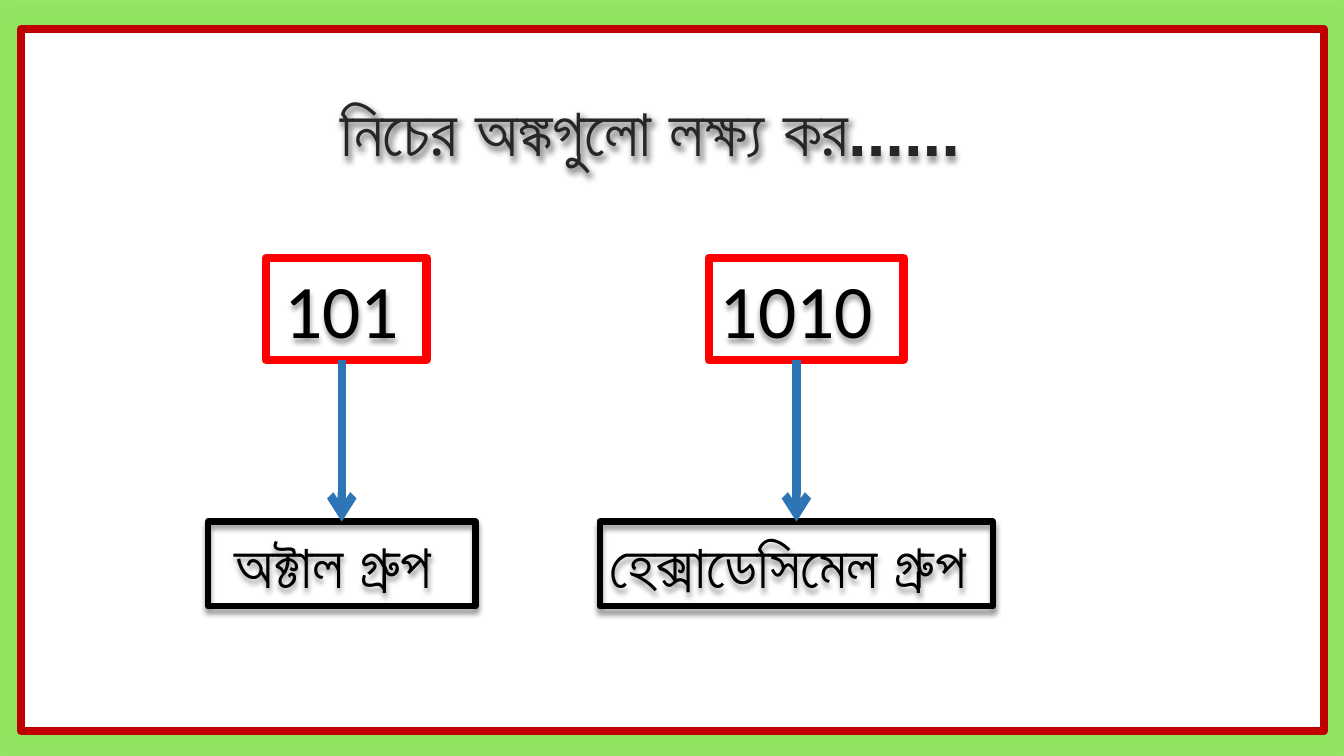
from lxml import etree
from pptx import Presentation
from pptx.dml.color import RGBColor
from pptx.enum.shapes import MSO_CONNECTOR, MSO_SHAPE
from pptx.enum.text import MSO_ANCHOR, PP_ALIGN
from pptx.oxml import parse_xml
from pptx.oxml.ns import qn
from pptx.util import Inches, Pt

RECTANGLE = MSO_SHAPE.RECTANGLE
STRAIGHT = MSO_CONNECTOR.STRAIGHT
CENTER = PP_ALIGN.CENTER
TOP = MSO_ANCHOR.TOP
NAMESPACE = "http://schemas.openxmlformats.org/drawingml/2006/main"
COLORS = {
    "white": "FFFFFF", "frame": "C00000", "glow": "8FE35C", "title": "262626",
    "black": "000000", "red": "FF0000", "arrow": "2E75B6",
}
GLOW = (f'<a:glow rad="{Inches(0.42)}"><a:srgbClr val="{COLORS["glow"]}">'
        '<a:alpha val="90000"/></a:srgbClr></a:glow>')
SHADOW = (f'<a:outerShdw blurRad="{Pt(4)}" dist="{Pt(3)}" dir="5400000" algn="ctr" '
          f'rotWithShape="0"><a:srgbClr val="{COLORS["black"]}">'
          '<a:alpha val="40000"/></a:srgbClr></a:outerShdw>')


class SlideBuilder:
    def __init__(self, presentation):
        self.width = presentation.slide_width
        self.height = presentation.slide_height
        self.slide = presentation.slides.add_slide(presentation.slide_layouts[6])

    def place(self, left, top, width, height):
        return (round(self.width * left / 100), round(self.height * top / 100),
                round(self.width * width / 100), round(self.height * height / 100))

    def effect(self, shape, content=""):
        properties = shape._element.spPr
        for existing in properties.findall(qn("a:effectLst")):
            properties.remove(existing)
        properties.append(parse_xml(
            f'<a:effectLst xmlns:a="{NAMESPACE}">{content}</a:effectLst>'))

    def stroke(self, shape, color, weight):
        shape.line.color.rgb = RGBColor.from_string(COLORS[color])
        shape.line.width = Pt(weight)

    def box(self, area, color, weight, fill=None, effect=""):
        shape = self.slide.shapes.add_shape(RECTANGLE, *self.place(*area))
        shape.shadow.inherit = False
        if fill:
            shape.fill.solid()
            shape.fill.fore_color.rgb = RGBColor.from_string(COLORS[fill])
        else:
            shape.fill.background()
        self.stroke(shape, color, weight)
        self.effect(shape, effect)
        return shape

    def caption(self, shape, text, size, font="Arial", color="black", bold=False,
                left=0.1, right=0.1):
        frame = shape.text_frame
        layout = {"word_wrap": True, "vertical_anchor": TOP,
                  "margin_left": Inches(left), "margin_right": Inches(right)}
        for name, value in layout.items():
            setattr(frame, name, value)
        paragraph = frame.paragraphs[0]
        paragraph.alignment = CENTER
        run = paragraph.add_run()
        run.text = text
        for name, value in {"size": Pt(size), "name": font, "bold": bold}.items():
            setattr(run.font, name, value)
        run.font.color.rgb = RGBColor.from_string(COLORS[color])
        etree.SubElement(run._r.get_or_add_rPr(), qn("a:cs"), typeface=font)

    def text(self, area, text, size, **style):
        shape = self.slide.shapes.add_textbox(*self.place(*area))
        self.effect(shape, SHADOW)
        self.caption(shape, text, size, **style)

    def arrow(self, x, top, bottom):
        start_x, start_y, end_x, end_y = self.place(x, top, x, bottom)
        connector = self.slide.shapes.add_connector(
            STRAIGHT, start_x, start_y, end_x, end_y)
        self.stroke(connector, "arrow", 6)
        etree.SubElement(connector.line._get_or_add_ln(), qn("a:tailEnd"), type="arrow")
        self.effect(connector)


def main():
    presentation = Presentation()
    presentation.slide_width = Inches(13.33)
    presentation.slide_height = Inches(7.5)
    builder = SlideBuilder(presentation)
    builder.box((1.58, 3.87, 96.92, 92.8), "frame", 6, fill="white", effect=GLOW)
    builder.text((24.31, 11.2, 51.16, 12.13), "নিচের অঙ্কগুলো লক্ষ্য কর......", 48,
                 color="title", bold=True, left=0.05, right=0.45)

    number_top, number_height, number_width = 34.13, 13.47, 17.7
    label_top, label_height = 69, 11.2
    groups = [
        ("101", "অক্টাল গ্রুপ", 25.43, 19.8, 11.93, 19.88),
        ("1010", "হেক্সাডেসিমেল গ্রুপ", 59.26, 52.74, 14.48, 29.26),
    ]
    for number, label, center, box_left, box_width, label_width in groups:
        builder.text((center - number_width / 2, number_top, number_width, number_height),
                     number, 54, font="Calibri")
        builder.box((box_left, number_top, box_width, number_height), "red", 6)
        label_box = builder.box(
            (center - label_width / 2, label_top, label_width, label_height),
            "black", 4.5, effect=SHADOW)
        builder.caption(label_box, label, 44, left=0.05, right=0.22)
        builder.arrow(center, number_top + number_height, label_top)
    presentation.save("out.pptx")


if __name__ == "__main__":
    main()
